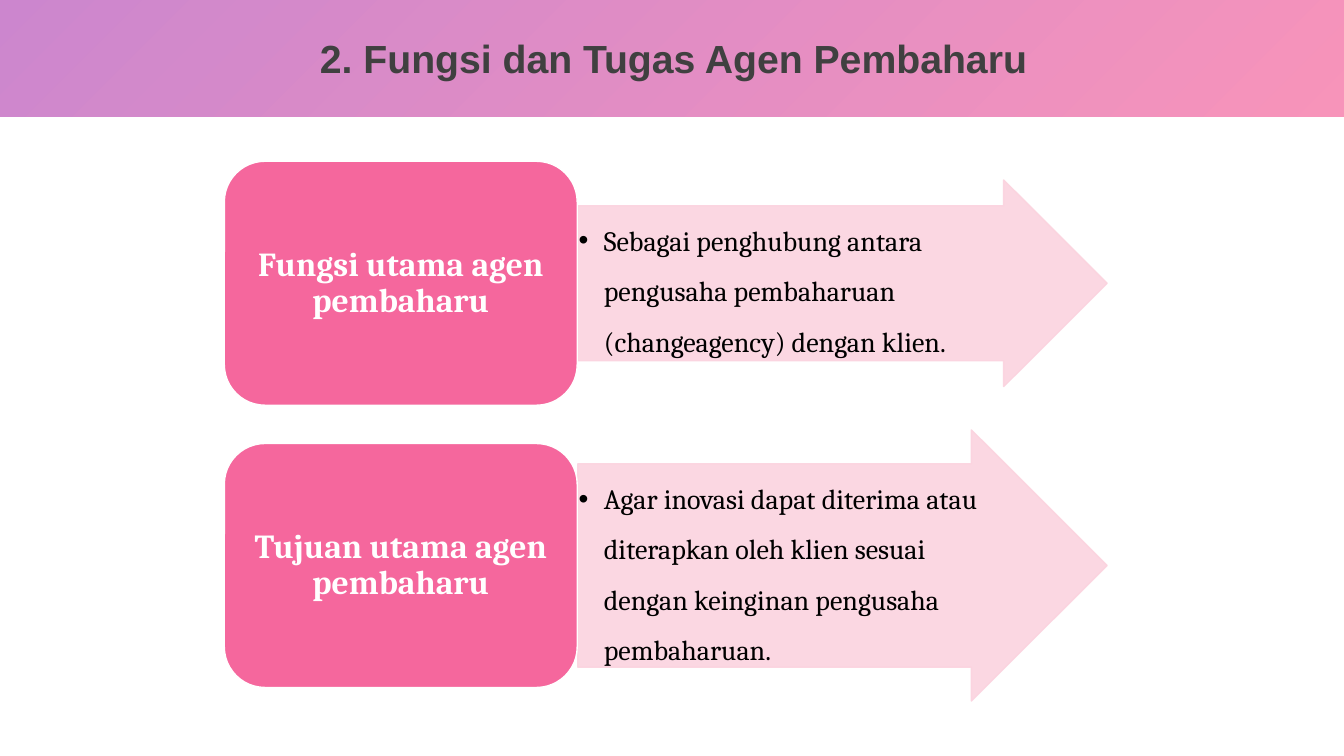
import pptx
import pptx.util
import pptx.dml.color
import pptx.enum.shapes
import pptx.enum.text
import pptx.oxml.ns
import lxml.etree

TITLE = "2. Fungsi dan Tugas Agen Pembaharu"
ROWS = [
    ("Fungsi utama agen pembaharu",
     "Sebagai penghubung antara pengusaha pembaharuan (changeagency) dengan klien.",
     2.05),
    ("Tujuan utama agen pembaharu",
     "Agar inovasi dapat diterima atau diterapkan oleh klien sesuai dengan "
     "keinginan pengusaha pembaharuan.",
     2.69),
]
HUES = {"pink": "F5679D", "plum": "B754BA", "pale": "FBD3DF",
        "white": "FFFFFF", "dark": "404040", "black": "000000"}
WIDE, HIGH = 13.33, 7.5
LEFT, BOX_W, BOX_H = 2.225, 3.5, 2.42
ARROW_X, ARROW_W = 5.73, 5.25
MID, PITCH = 2.81, 2.8

KIND = pptx.enum.shapes.MSO_SHAPE
ALIGN = pptx.enum.text.PP_ALIGN
ANCHOR = pptx.enum.text.MSO_ANCHOR
Inches = pptx.util.Inches
Pt = pptx.util.Pt
qn = pptx.oxml.ns.qn


def hue(name):
    return pptx.dml.color.RGBColor.from_string(HUES[name])


def add(slide, kind, box, fill=None, line=None):
    shape = slide.shapes.add_shape(kind, *map(Inches, box))
    shape.shadow.inherit = False
    if fill:
        shape.fill.solid()
        shape.fill.fore_color.rgb = hue(fill)
    if line:
        shape.line.color.rgb = hue(line)
        shape.line.width = Pt(1)
    else:
        shape.line.fill.background()
    return shape


def fade(shape, share):
    for node in list(shape.element.spPr.iter(qn("a:srgbClr"))):
        lxml.etree.SubElement(node, qn("a:alpha"), val=str(share * 1000))


def write(shape, text, size, face, tint, bold, align, anchor, gap):
    frame = shape.text_frame
    frame.word_wrap = True
    frame.auto_size = pptx.enum.text.MSO_AUTO_SIZE.NONE
    frame.vertical_anchor = anchor
    para = frame.paragraphs[0]
    para.text = text
    para.alignment = align
    para.line_spacing = gap
    font = para.font
    font.size, font.name, font.bold = Pt(size), face, bold
    font.color.rgb = hue(tint)
    return para


def add_band(slide):
    band = add(slide, KIND.RECTANGLE, (0, 0, WIDE, 1.16))
    band.fill.gradient()
    band.fill.gradient_angle = 135
    for stop, name in zip(band.fill.gradient_stops, ("pink", "plum")):
        stop.color.rgb = hue(name)
    fade(band, 70)


def add_title(slide):
    title = slide.shapes.title
    slide.shapes.element.append(title.element)
    title.left, title.top, title.width, title.height = map(
        Inches, (0.35, 0.21, 12.66, 0.79))
    write(title, TITLE, 28, "Arial", "dark", True,
          ALIGN.CENTER, ANCHOR.MIDDLE, 0.9)


def add_row(slide, mid, head, body, tall):
    arrow = add(slide, KIND.RIGHT_ARROW,
                (ARROW_X, mid - tall / 2, ARROW_W, tall), "pale", "pale")
    arrow.adjustments[0], arrow.adjustments[1] = 0.75, 0.5
    fade(arrow, 90)
    para = write(arrow, body, 20, "Cambria", "black", False,
                 ALIGN.LEFT, ANCHOR.TOP, 1.5)
    frame = arrow.text_frame
    frame.margin_left = frame.margin_right = Inches(0.01)
    frame.margin_top = frame.margin_bottom = Inches(0.01)
    props = para._p.get_or_add_pPr()
    props.set("marL", str(Inches(0.25)))
    props.set("indent", str(-Inches(0.25)))
    lxml.etree.SubElement(props, qn("a:buFont"), typeface="Arial")
    lxml.etree.SubElement(props, qn("a:buChar"), char="•")
    props.append(props.find(qn("a:defRPr")))

    card = add(slide, KIND.ROUNDED_RECTANGLE,
               (LEFT, mid - BOX_H / 2, BOX_W, BOX_H), "pink", "white")
    write(card, head, 24, "Cambria", "white", True,
          ALIGN.CENTER, ANCHOR.MIDDLE, 0.9)


def main():
    deck = pptx.Presentation()
    deck.slide_width, deck.slide_height = Inches(WIDE), Inches(HIGH)
    slide = deck.slides.add_slide(deck.slide_layouts[5])
    add_band(slide)
    add_title(slide)
    for i, row in enumerate(ROWS):
        add_row(slide, MID + i * PITCH, *row)
    deck.save("out.pptx")


if __name__ == "__main__":
    main()
